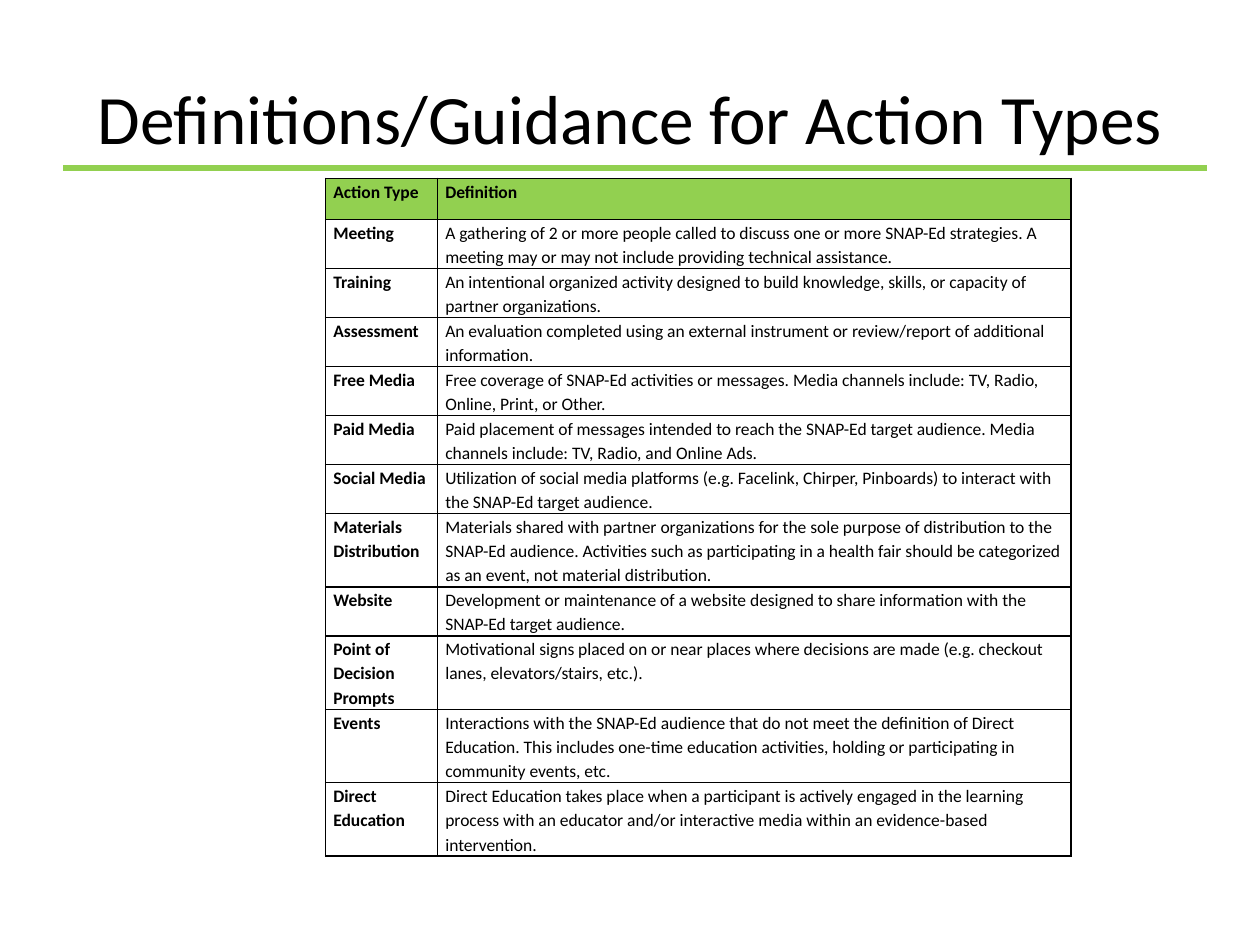
from lxml import etree
from pptx import Presentation
from pptx.dml.color import RGBColor
from pptx.enum import shapes, text
from pptx.oxml import parse_xml
from pptx.oxml.ns import nsdecls, qn
from pptx.util import Pt

COLORS = {"green": "92D050", "black": "000000"}
FONT = "Calibri"
TITLE = "Definitions/Guidance for Action Types"
HEADER = ("Action Type", "Definition")
# action type, definition, lines of text in the row
ACTIONS = [
    ("Meeting", "A gathering of 2 or more people called to discuss one or more SNAP-Ed strategies. "
     "A meeting may or may not include providing technical assistance.", 2),
    ("Training", "An intentional organized activity designed to build knowledge, skills, or capacity "
     "of partner organizations.", 2),
    ("Assessment", "An evaluation completed using an external instrument or review/report of "
     "additional information.", 2),
    ("Free Media", "Free coverage of SNAP-Ed activities or messages. Media channels include: TV, "
     "Radio, Online, Print, or Other.", 2),
    ("Paid Media", "Paid placement of messages intended to reach the SNAP-Ed target audience. Media "
     "channels include: TV, Radio, and Online Ads.", 2),
    ("Social Media", "Utilization of social media platforms (e.g. Facelink, Chirper, Pinboards) to "
     "interact with the SNAP-Ed target audience.", 2),
    ("Materials Distribution", "Materials shared with partner organizations for the sole purpose of "
     "distribution to the SNAP-Ed audience. Activities such as participating in a health fair "
     "should be categorized as an event, not material distribution.", 3),
    ("Website", "Development or maintenance of a website designed to share information with the "
     "SNAP-Ed target audience.", 2),
    ("Point of Decision Prompts", "Motivational signs placed on or near places where decisions are "
     "made (e.g. checkout lanes, elevators/stairs, etc.).", 3),
    ("Events", "Interactions with the SNAP-Ed audience that do not meet the definition of Direct "
     "Education. This includes one-time education activities, holding or participating in "
     "community events, etc.", 3),
    ("Direct Education", "Direct Education takes place when a participant is actively engaged in the "
     "learning process with an educator and/or interactive media within an evidence-based "
     "intervention.", 3),
]
LEFT, TOP = 186, 102
COL_WIDTHS = (64, 362)
HEADER_HEIGHT, LINE_HEIGHT = 23.5, 14


def rgb(name):
    return RGBColor.from_string(COLORS[name])


def style_font(font, size, bold=False):
    font.name, font.size, font.bold = FONT, Pt(size), bold
    font.color.rgb = rgb("black")


def add_borders(cell):
    tc_pr = cell._tc.get_or_add_tcPr()
    for i, side in enumerate(("lnL", "lnR", "lnT", "lnB")):
        tc_pr.insert(i, parse_xml(
            f'<a:{side} {nsdecls("a")} w="{Pt(1)}"><a:solidFill>'
            f'<a:srgbClr val="{COLORS["black"]}"/></a:solidFill></a:{side}>'))


def fill_cell(cell, words, bold, header):
    cell.margin_left = cell.margin_right = Pt(4.5)
    cell.margin_top = cell.margin_bottom = 0
    cell.vertical_anchor = text.MSO_ANCHOR.TOP
    if header:
        cell.fill.solid()
        cell.fill.fore_color.rgb = rgb("green")
    else:
        cell.fill.background()
    add_borders(cell)
    p = cell.text_frame.paragraphs[0]
    p.text = words
    p.line_spacing = 1.15
    style_font(p.runs[0].font, 10, bold)


prs = Presentation()
prs.slide_width, prs.slide_height = Pt(720), Pt(540)
s = prs.slides.add_slide(prs.slide_layouts[5])

# Rule under the title
rule = s.shapes.add_connector(shapes.MSO_CONNECTOR.STRAIGHT, Pt(36), Pt(96), Pt(690), Pt(96))
rule.line.color.rgb = rgb("green")
rule.line.width = Pt(3)
etree.SubElement(rule._element.spPr, qn("a:effectLst"))

# Title
title = s.shapes.title
title.left, title.top, title.width, title.height = Pt(36), Pt(21.6), Pt(648), Pt(90)
tf = title.text_frame
tf.text = TITLE
tf.word_wrap = True
tf.vertical_anchor = text.MSO_ANCHOR.MIDDLE
p = tf.paragraphs[0]
p.alignment = text.PP_ALIGN.CENTER
style_font(p.runs[0].font, 39.6)

# Table of action types
heights = [HEADER_HEIGHT] + [LINE_HEIGHT * lines for _, _, lines in ACTIONS]
table = s.shapes.add_table(len(heights), len(COL_WIDTHS), Pt(LEFT), Pt(TOP),
                           Pt(sum(COL_WIDTHS)), Pt(sum(heights))).table
table.horz_banding = False
for column, width in zip(table.columns, COL_WIDTHS):
    column.width = Pt(width)
for row, height in zip(table.rows, heights):
    row.height = Pt(height)
for r, words in enumerate([HEADER] + [action[:2] for action in ACTIONS]):
    for c, content in enumerate(words):
        fill_cell(table.cell(r, c), content, bold=r == 0 or c == 0, header=r == 0)

prs.save("out.pptx")
